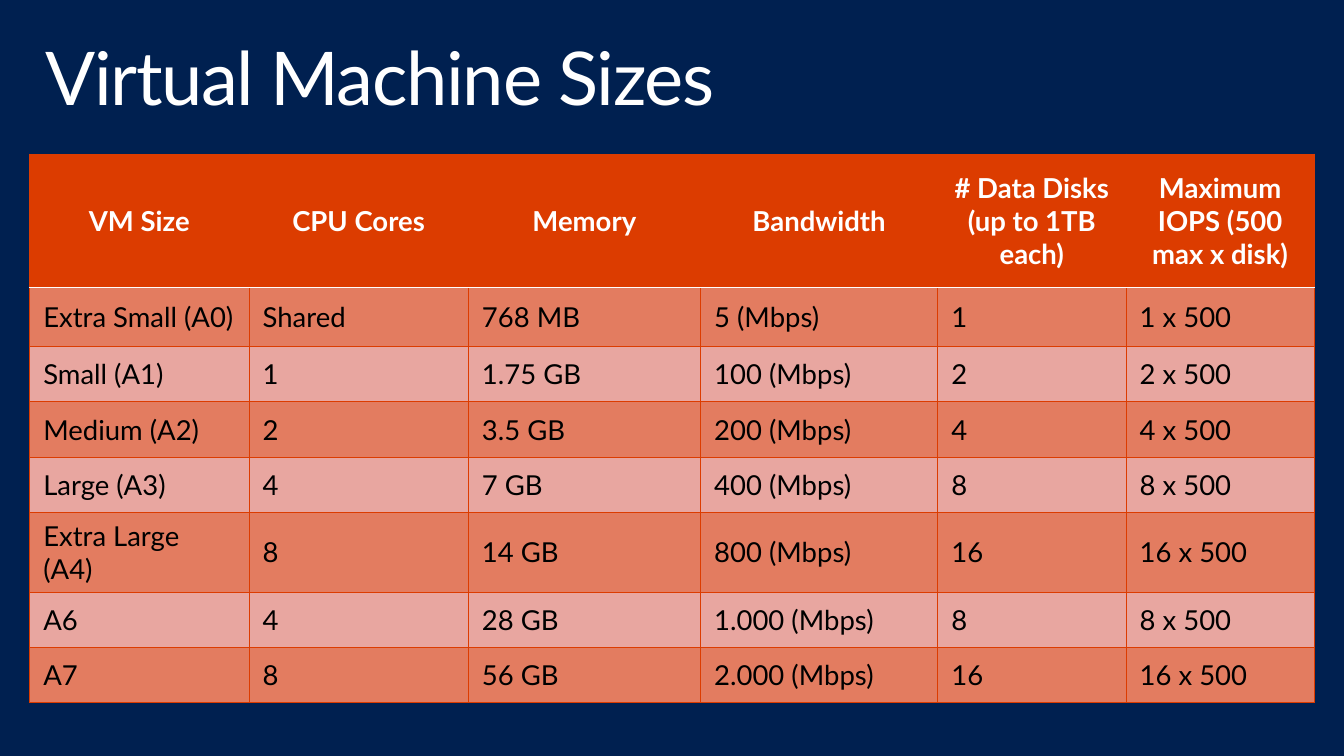
from lxml import etree
from pptx import Presentation
from pptx.dml.color import RGBColor
from pptx.enum.text import MSO_ANCHOR, PP_ALIGN
from pptx.oxml.ns import qn
from pptx.util import Pt

MIDDLE = MSO_ANCHOR.MIDDLE
LEFT, CENTER = PP_ALIGN.LEFT, PP_ALIGN.CENTER
NAVY = RGBColor(0x00, 0x20, 0x50)
ORANGE = RGBColor(0xDC, 0x3C, 0x00)
CORAL = RGBColor(0xE3, 0x7C, 0x60)
PINK = RGBColor(0xE8, 0xA6, 0xA0)
WHITE = RGBColor(0xFF, 0xFF, 0xFF)
BLACK = RGBColor(0x00, 0x00, 0x00)

TITLE_FONT = {"name": "Lato", "size": Pt(54), "bold": False}
HEADER_FONT = {"name": "Lato", "size": Pt(20), "bold": True}
BODY_FONT = {"name": "Lato", "size": Pt(20), "bold": False}
TITLE_FRAME = {"word_wrap": True, "margin_left": Pt(11.5), "margin_right": Pt(11.5),
               "margin_top": Pt(7.2), "margin_bottom": Pt(7.2)}
CELL_FORMAT = {"vertical_anchor": MIDDLE, "margin_left": Pt(10), "margin_right": Pt(10),
               "margin_top": Pt(5), "margin_bottom": Pt(5)}

COLUMN_WIDTHS = [159.8, 159.8, 169.2, 172.8, 137.2, 137.2]
ROW_HEIGHTS = [97.2, 43, 40.3, 40.3, 40.3, 43, 40.3, 40.3]
VM_SIZES = [
    ["VM Size", "CPU Cores", "Memory", "Bandwidth",
     "# Data Disks (up to 1TB each)", "Maximum IOPS (500 max x disk)"],
    ["Extra Small (A0)", "Shared", "768 MB", "5 (Mbps)", "1", "1 x 500"],
    ["Small (A1)", "1", "1.75 GB", "100 (Mbps)", "2", "2 x 500"],
    ["Medium (A2)", "2", "3.5 GB", "200 (Mbps)", "4", "4 x 500"],
    ["Large (A3)", "4", "7 GB", "400 (Mbps)", "8", "8 x 500"],
    ["Extra Large (A4)", "8", "14 GB", "800 (Mbps)", "16", "16 x 500"],
    ["A6", "4", "28 GB", "1.000 (Mbps)", "8", "8 x 500"],
    ["A7", "8", "56 GB", "2.000 (Mbps)", "16", "16 x 500"],
]


def apply_format(obj, values):
    """Set each attribute of an object from a dict."""
    for name, value in values.items():
        setattr(obj, name, value)


def add_run(p, text, font, color):
    """Add a formatted run to a paragraph."""
    r = p.add_run()
    r.text = text
    apply_format(r.font, font)
    r.font.color.rgb = color
    return r


def add_title(s, text):
    """Add the slide title with tightened letter spacing."""
    tf = s.shapes.add_textbox(Pt(21.6), Pt(23), Pt(936), Pt(72)).text_frame
    apply_format(tf, TITLE_FRAME)
    p = tf.paragraphs[0]
    p.line_spacing = 0.9
    r = add_run(p, text, TITLE_FONT, WHITE)
    r.font._element.set("spc", "-100")


def set_border(cell, side, color, width):
    """Draw one side of a cell border."""
    tcPr = cell._tc.get_or_add_tcPr()
    ln = etree.SubElement(tcPr, qn(f"a:ln{side}"), w=str(Pt(width)))
    fill = etree.SubElement(ln, qn("a:solidFill"))
    etree.SubElement(fill, qn("a:srgbClr"), val=str(color))


def fill_cell(cell, text, row):
    """Write and style a cell according to its row."""
    header = row == 0
    apply_format(cell, CELL_FORMAT)
    p = cell.text_frame.paragraphs[0]
    p.alignment = CENTER if header else LEFT
    add_run(p, text, HEADER_FONT if header else BODY_FONT, WHITE if header else BLACK)
    white_side = {0: "B", 1: "T"}.get(row)
    for side in "LRTB":
        color, width = (WHITE, 0.85) if side == white_side else (ORANGE, 0.75)
        set_border(cell, side, color, width)
    cell.fill.solid()
    cell.fill.fore_color.rgb = ORANGE if header else CORAL if row % 2 else PINK


def add_size_table(s, rows):
    """Add the table of virtual machine sizes."""
    frame = s.shapes.add_table(len(rows), len(COLUMN_WIDTHS), Pt(21.6), Pt(112.3),
                               Pt(sum(COLUMN_WIDTHS)), Pt(sum(ROW_HEIGHTS)))
    table = frame.table
    for column, width in zip(table.columns, COLUMN_WIDTHS):
        column.width = Pt(width)
    for row, height in zip(table.rows, ROW_HEIGHTS):
        row.height = Pt(height)
    for i, texts in enumerate(rows):
        for j, text in enumerate(texts):
            fill_cell(table.cell(i, j), text, i)


def main():
    """Build and save the slide."""
    prs = Presentation()
    prs.slide_width, prs.slide_height = Pt(979.2), Pt(550.8)
    s = prs.slides.add_slide(prs.slide_layouts[6])
    s.background.fill.solid()
    s.background.fill.fore_color.rgb = NAVY
    add_title(s, "Virtual Machine Sizes")
    add_size_table(s, VM_SIZES)
    prs.save("out.pptx")


if __name__ == "__main__":
    main()
